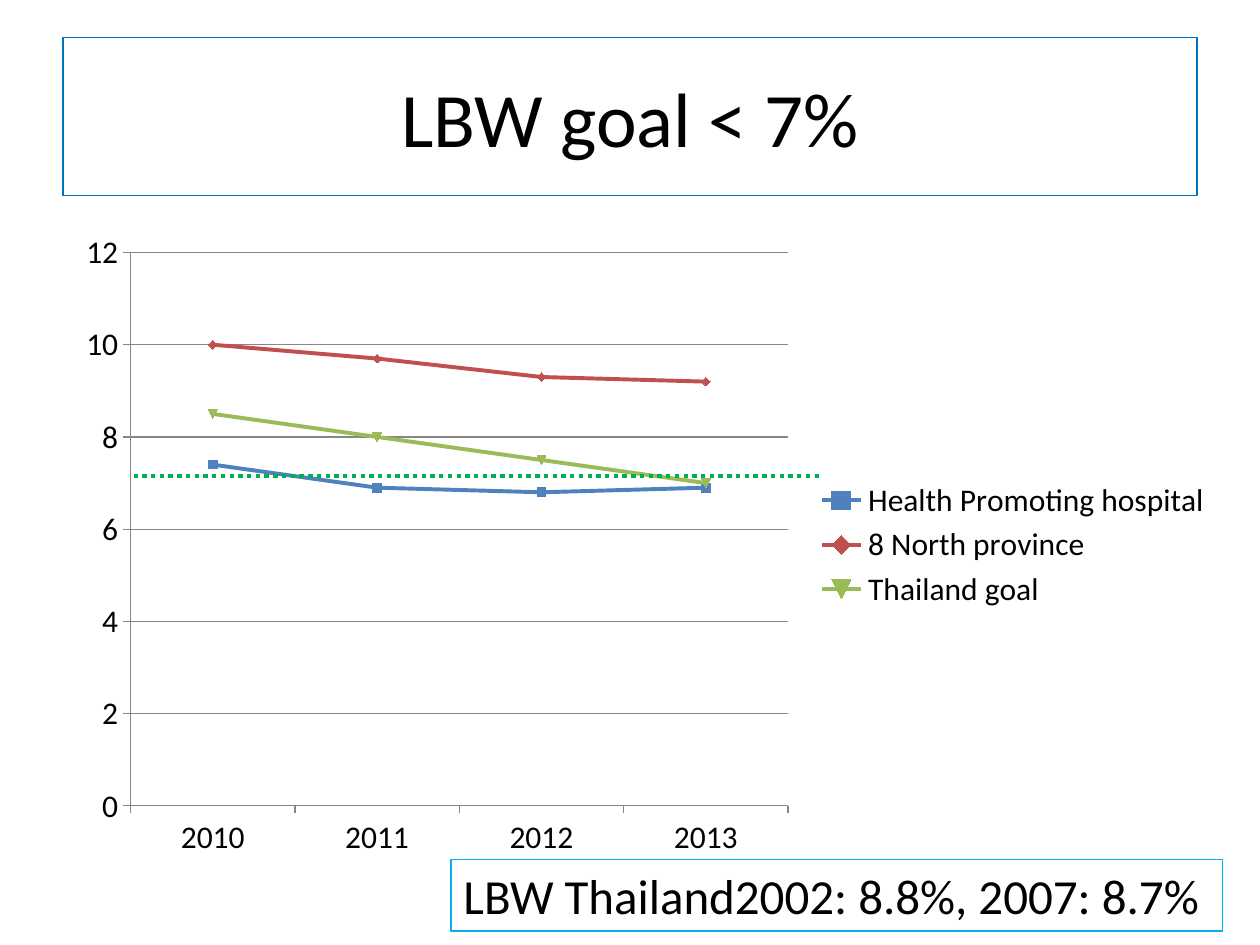
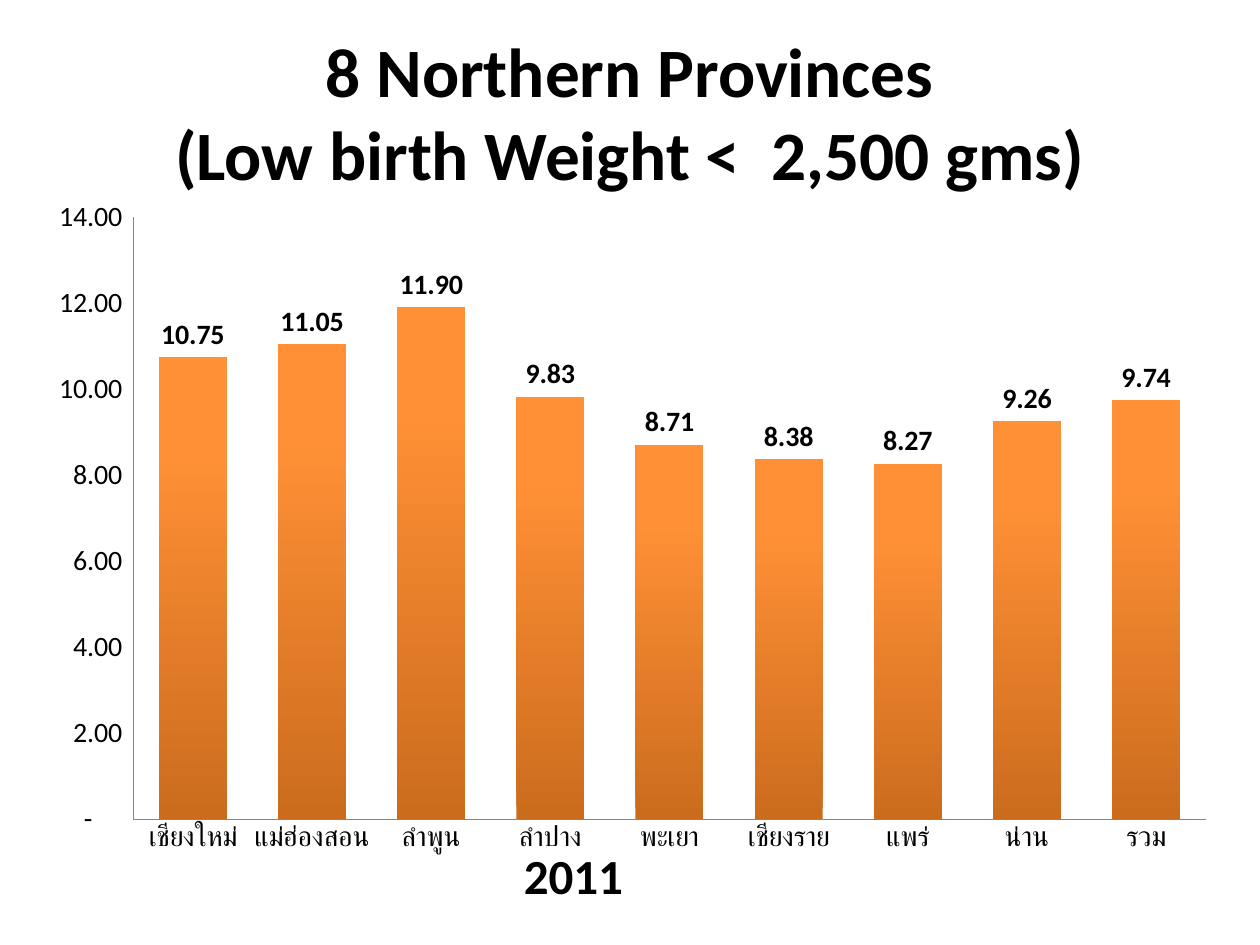
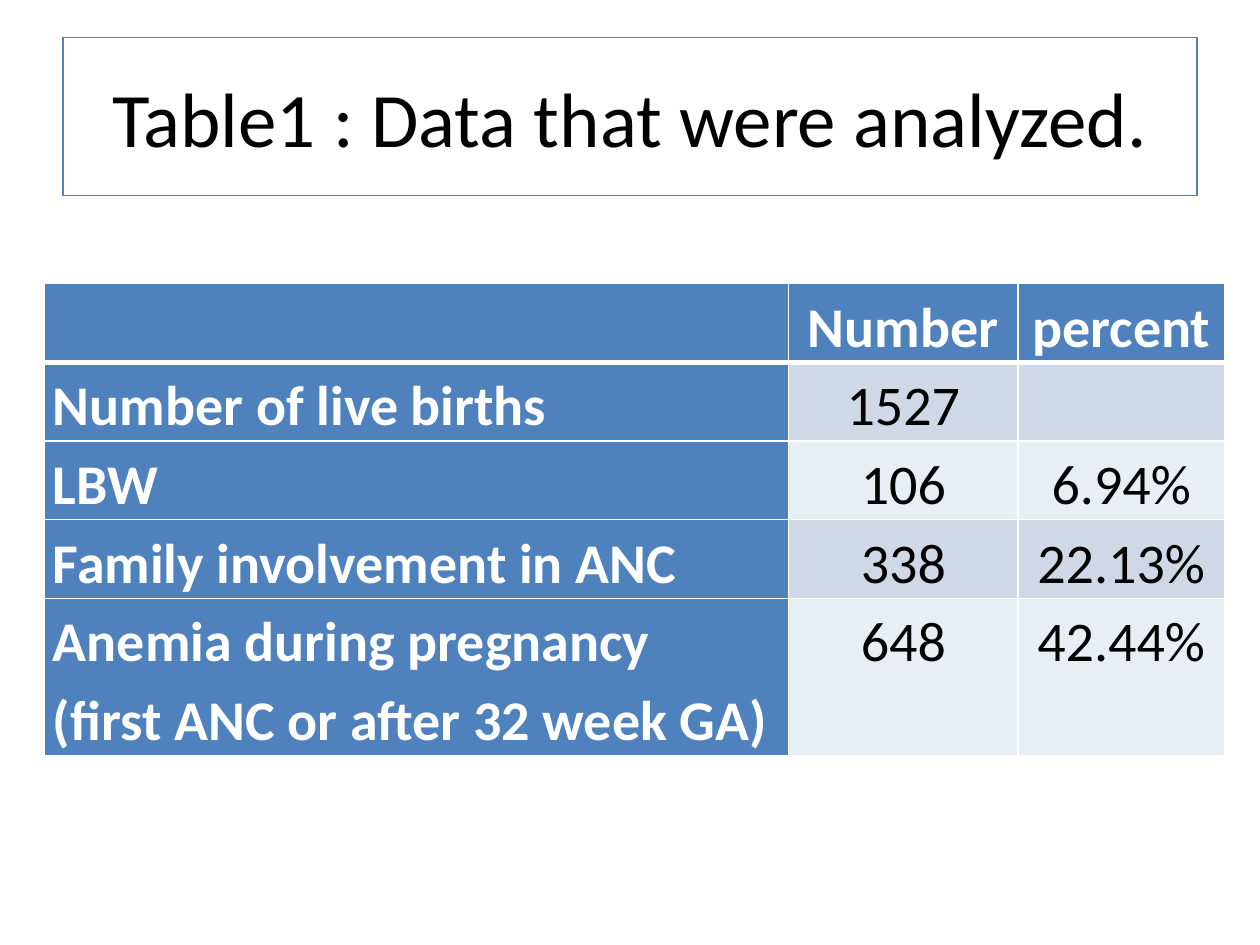
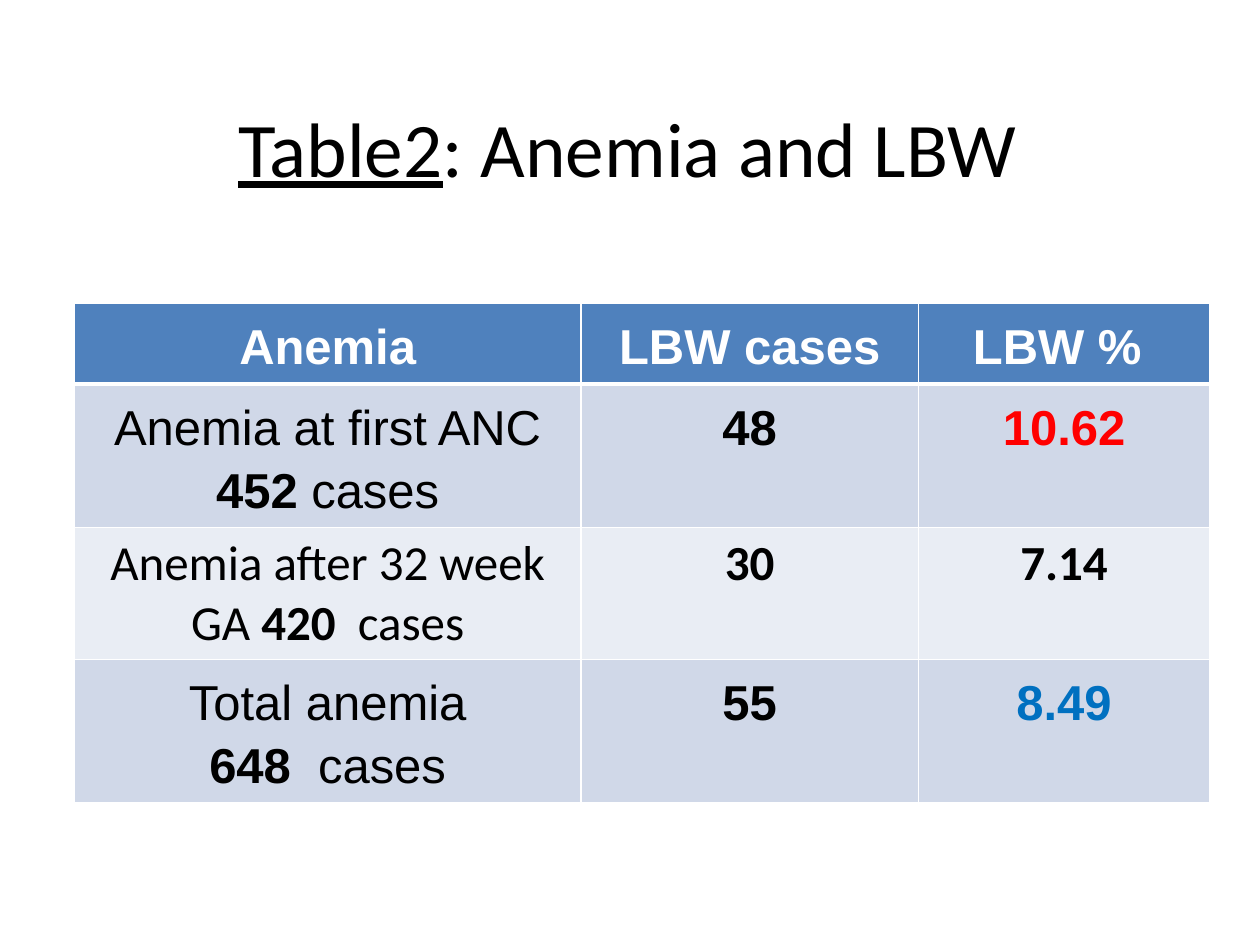
"""Build four slides on low birth weight: two charts and two tables."""
from dataclasses import dataclass
from typing import Optional

from lxml.etree import SubElement
from pptx import Presentation
from pptx.chart.data import CategoryChartData
from pptx.dml.color import RGBColor
from pptx.enum.chart import XL_CHART_TYPE as ChartType
from pptx.enum.chart import XL_LABEL_POSITION as LabelPosition
from pptx.enum.chart import XL_LEGEND_POSITION as LegendPosition
from pptx.enum.chart import XL_TICK_MARK as TickMark
from pptx.enum.dml import MSO_LINE as Dash
from pptx.enum.shapes import MSO_CONNECTOR as ConnectorType
from pptx.enum.text import MSO_ANCHOR as Anchor
from pptx.enum.text import MSO_AUTO_SIZE as AutoSize
from pptx.enum.text import PP_ALIGN as Align
from pptx.oxml.ns import qn
from pptx.util import Inches, Pt

BLACK, WHITE, GREY = "000000", "FFFFFF", "868686"
BLUE, RED, GREEN = "4F81BD", "C0504D", "9BBB59"
STRONG_BLUE, BRIGHT_BLUE, GOAL_GREEN, ALERT_RED = "0070C0", "00B0F0", "00B050", "FF0000"
BAR_DARK, BAR_LIGHT = "CB6C1D", "FF9036"
BANDS = ("D0D8E8", "E9EDF4")
BODY_FONT, TABLE_FONT = "Calibri", "Arial"
DECIMALS = '_(* #,##0.00_);_(* \\(#,##0.00\\);_(* "-"??_);_(@_)'


@dataclass(frozen=True)
class Box:
    """A frame in inches."""
    left: float
    top: float
    width: float
    height: float

    def lengths(self) -> tuple:
        """Return the frame as slide lengths."""
        return tuple(Inches(n) for n in (self.left, self.top, self.width, self.height))


@dataclass(frozen=True)
class Run:
    """A piece of text with one weight and underline."""
    text: str
    bold: bool = False
    underline: bool = False


@dataclass(frozen=True)
class TextStyle:
    """Font and paragraph settings."""
    size: float
    color: str = BLACK
    font: str = BODY_FONT
    align: Align = Align.CENTER
    spacing: Optional[float] = None


@dataclass(frozen=True)
class Cell:
    """Paragraphs of a table cell, and the colour of their text."""
    paragraphs: tuple = ()
    color: str = BLACK
    align: Align = Align.CENTER


@dataclass(frozen=True)
class Row:
    """A table row with its height, font, spacing and margins."""
    height: float
    cells: tuple
    font: str = BODY_FONT
    spacing: Optional[float] = 1.15
    margin_x: float = 0.07
    margin_y: float = 0.07


TITLE_BOX = Box(0.5, 0.3, 9, 1.25)


def rgb(color: str) -> RGBColor:
    """Turn a hex string into a colour."""
    return RGBColor.from_string(color)


def set_line(line, color: str, width: float) -> None:
    """Colour a line and set its width in points."""
    line.color.rgb = rgb(color)
    line.width = Pt(width)


def set_font(font, size: float, color: str = BLACK, name: str = BODY_FONT) -> None:
    """Set the size, colour and typeface of a font."""
    font.size, font.name = Pt(size), name
    font.color.rgb = rgb(color)


def write_paragraph(paragraph, runs: tuple, style: TextStyle) -> None:
    """Fill a paragraph with runs in one style."""
    paragraph.alignment = style.align
    if style.spacing:
        paragraph.line_spacing = style.spacing
    for part in runs:
        run = paragraph.add_run()
        run.text = part.text
        run.font.bold, run.font.underline = part.bold, part.underline
    for holder in (paragraph, *paragraph.runs):
        set_font(holder.font, style.size, style.color, style.font)


def add_slide(presentation, box: Box, lines: tuple, size: float = 44, outline: str = ""):
    """Add a slide with its title formatted and return it."""
    slide = presentation.slides.add_slide(presentation.slide_layouts[5])
    title = slide.shapes.title
    title.left, title.top, title.width, title.height = box.lengths()
    frame = title.text_frame
    frame.auto_size, frame.vertical_anchor = AutoSize.NONE, Anchor.MIDDLE
    paragraph = frame.paragraphs[0]
    for index, runs in enumerate(lines):
        if index:
            paragraph.add_line_break()
        write_paragraph(paragraph, runs, TextStyle(size))
    if outline:
        set_line(title.line, outline, 0.75)
    return slide


def add_note(slide, box: Box, run: Run, outline: str = "") -> None:
    """Add a one-line text box that fits its text."""
    note = slide.shapes.add_textbox(*box.lengths())
    note.text_frame.word_wrap = False
    note.text_frame.auto_size = AutoSize.SHAPE_TO_FIT_TEXT
    write_paragraph(note.text_frame.paragraphs[0], (run,), TextStyle(28, align=Align.LEFT))
    if outline:
        set_line(note.line, outline, 0.75)


def add_chart(slide, kind: ChartType, box: Box, categories: tuple, series: dict,
              size: float, maximum: float, tick: TickMark, gridlines: bool):
    """Add a chart with styled axes and return it."""
    data = CategoryChartData()
    data.categories = categories
    for name, values in series.items():
        data.add_series(name, values)
    chart = slide.shapes.add_chart(kind, *box.lengths(), data).chart
    chart.has_title = chart.has_legend = False
    set_font(chart.font, size)
    for axis in (chart.category_axis, chart.value_axis):
        axis.major_tick_mark, axis.minor_tick_mark = tick, TickMark.NONE
        set_line(axis.format.line, GREY, 0.75)
    value_axis = chart.value_axis
    value_axis.minimum_scale, value_axis.maximum_scale, value_axis.major_unit = 0, maximum, 2
    value_axis.has_major_gridlines = gridlines
    if gridlines:
        set_line(value_axis.major_gridlines.format.line, GREY, 0.75)
    chart.plots[0].vary_by_categories = False
    return chart


def add_goal_line(slide, left: float, right: float, top: float) -> None:
    """Draw the dotted goal line across a chart."""
    line = slide.shapes.add_connector(
        ConnectorType.STRAIGHT, Inches(left), Inches(top), Inches(right), Inches(top))
    set_line(line.line, GOAL_GREEN, 2.5)
    line.line.dash_style = Dash.ROUND_DOT
    SubElement(line._element.spPr, qn("a:effectLst"))


def set_borders(cell, top: float, bottom: float) -> None:
    """Give a cell white borders with the top and bottom widths in points."""
    properties = cell._tc.get_or_add_tcPr()
    for side, width in (("L", 1), ("R", 1), ("T", top), ("B", bottom)):
        border = SubElement(properties, qn(f"a:ln{side}"), w=str(Pt(width)))
        fill = SubElement(border, qn("a:solidFill"))
        SubElement(fill, qn("a:srgbClr"), val=WHITE)


def fill_cell(cell, content: Cell, row: Row, size: float, fill: str) -> None:
    """Write, colour and space one table cell."""
    cell.margin_left = cell.margin_right = Inches(row.margin_x)
    cell.margin_top = cell.margin_bottom = Inches(row.margin_y)
    cell.fill.solid()
    cell.fill.fore_color.rgb = rgb(fill)
    style = TextStyle(size, content.color, row.font, content.align, row.spacing)
    frame = cell.text_frame
    for index, runs in enumerate(content.paragraphs):
        paragraph = frame.add_paragraph() if index else frame.paragraphs[0]
        write_paragraph(paragraph, runs, style)


def add_table(slide, box: Box, widths: tuple, rows: tuple, size: float,
              header_column: bool = False) -> None:
    """Add a banded table whose first row is a header."""
    table = slide.shapes.add_table(len(rows), len(widths), *box.lengths()).table
    for column, width in zip(table.columns, widths):
        column.width = Inches(width)
    for row_index, row in enumerate(rows):
        table.rows[row_index].height = Inches(row.height)
        for column_index, content in enumerate(row.cells):
            is_header = row_index == 0 or (header_column and column_index == 0)
            fill = BLUE if is_header else BANDS[(row_index - 1) % 2]
            cell = table.cell(row_index, column_index)
            set_borders(cell, 3 if row_index == 1 else 1, 3 if row_index == 0 else 1)
            fill_cell(cell, content, row, size, fill)


def heading(*lines: str, align: Align = Align.CENTER) -> Cell:
    """Make a bold white cell."""
    return Cell(tuple((Run(line, True),) for line in lines), WHITE, align)


def value(text: str, bold: bool = False, color: str = BLACK) -> Cell:
    """Make a centred cell with one value."""
    return Cell(((Run(text, bold),),) if text else (), color)


def build_goal_slide(presentation) -> None:
    """Compare the yearly LBW rates with the goal."""
    slide = add_slide(presentation, TITLE_BOX, ((Run("LBW goal < 7%"),),), outline=STRONG_BLUE)
    rates = {
        "Health Promoting hospital": (7.4, 6.9, 6.8, 6.9),
        "8 North province": (10, 9.7, 9.3, 9.2),
        "Thailand goal": (8.5, 8, 7.5, 7),
    }
    chart = add_chart(slide, ChartType.LINE_MARKERS, Box(0.5, 1.75, 9.22, 5.15),
                      ("2010", "2011", "2012", "2013"), rates, 18, 12, TickMark.OUTSIDE, True)
    chart.has_legend = True
    chart.legend.position = LegendPosition.RIGHT
    chart.legend.include_in_layout = False
    for series, color in zip(chart.plots[0].series, (BLUE, RED, GREEN)):
        series.smooth = False
        set_line(series.format.line, color, 2.25)
    add_goal_line(slide, 1.06, 6.5, 3.78)
    add_note(slide, Box(3.58, 6.82, 6.12, 0.57), Run("LBW Thailand2002: 8.8%, 2007: 8.7%"),
             BRIGHT_BLUE)


def build_province_slide(presentation) -> None:
    """Show the LBW rate of each province."""
    lines = ((Run("8 Northern Provinces", True),),
             (Run("(Low birth Weight <  2,500 gms)", True),))
    slide = add_slide(presentation, Box(0.5, 0.21, 9, 1.34), lines, 39.6)
    provinces = ("เชียงใหม่", "แม่ฮ่องสอน", "ลำพูน", "ลำปาง", "พะเยา",
                 "เชียงราย", "แพร่", "น่าน", "รวม")
    rates = {"Series 1": (10.75, 11.05, 11.9, 9.83, 8.71, 8.38, 8.27, 9.26, 9.74)}
    chart = add_chart(slide, ChartType.COLUMN_CLUSTERED, Box(0.23, 1.48, 9.53, 5.39),
                      provinces, rates, 16, 14, TickMark.NONE, False)
    tick_labels = chart.value_axis.tick_labels
    tick_labels.number_format, tick_labels.number_format_is_linked = DECIMALS, False
    plot = chart.plots[0]
    plot.gap_width = 75
    plot.has_data_labels = True
    labels = plot.data_labels
    labels.show_value, labels.position = True, LabelPosition.OUTSIDE_END
    labels.number_format, labels.number_format_is_linked = DECIMALS, False
    set_font(labels.font, 16)
    labels.font.bold = True
    bars = plot.series[0].format
    bars.fill.gradient()
    bars.fill.gradient_angle = 90
    for stop, color, position in zip(bars.fill.gradient_stops, (BAR_DARK, BAR_LIGHT), (0, 0.8)):
        stop.color.rgb, stop.position = rgb(color), position
    bars.line.fill.background()
    add_note(slide, Box(4.06, 6.66, 1, 0.57), Run("2011", True))


def build_data_slide(presentation) -> None:
    """Tabulate the analyzed data."""
    slide = add_slide(presentation, TITLE_BOX, ((Run("Table1 : Data that were analyzed."),),),
                      outline=BLUE)
    records = (
        (("Number of live births",), "1527", ""),
        (("LBW",), "106", "6.94%"),
        (("Family involvement in ANC",), "338", "22.13%"),
        (("Anemia during pregnancy", "(first ANC or after 32 week GA)"), "648", "42.44%"),
    )
    header = Row(0.61, (Cell(), heading("Number"), heading("percent")), margin_y=0)
    rows = tuple(
        Row(0.62 * len(lines), (heading(*lines, align=Align.LEFT), value(number), value(percent)),
            margin_y=0)
        for lines, number, percent in records)
    add_table(slide, Box(0.35, 2.25, 9.37, 3.68), (5.91, 1.82, 1.64), (header, *rows), 32, True)


def build_anemia_slide(presentation) -> None:
    """Tabulate LBW among anemia cases."""
    lines = ((Run("Table2", underline=True), Run(": Anemia and LBW")),)
    slide = add_slide(presentation, Box(0.12, 0.3, 9.72, 1.72), lines, 44.1)
    first = Cell(((Run("Anemia at first ANC "), Run("452 ", True), Run("cases")),))
    later = Cell(((Run("Anemia after 32 week GA "), Run("420", True), Run("  cases")),))
    total = Cell(((Run("Total anemia"),), (Run("648  ", True), Run("cases"))))
    rows = (
        Row(0.63, tuple(heading(text) for text in ("Anemia", "LBW cases", "LBW % ")), TABLE_FONT),
        Row(1.13, (first, value("48", True), value("10.62", True, ALERT_RED)), TABLE_FONT),
        Row(1.05, (later, value("30", True), value("7.14", True)),
            spacing=None, margin_x=0.1, margin_y=0.05),
        Row(1.13, (total, value("55", True), value("8.49", True, STRONG_BLUE)), TABLE_FONT),
    )
    add_table(slide, Box(0.59, 2.41, 9, 4), (4.02, 2.68, 2.31), rows, 28)


def main() -> None:
    """Build and save the presentation."""
    presentation = Presentation()
    presentation.slide_width, presentation.slide_height = Inches(10), Inches(7.5)
    build_goal_slide(presentation)
    build_province_slide(presentation)
    build_data_slide(presentation)
    build_anemia_slide(presentation)
    presentation.save("out.pptx")


if __name__ == "__main__":
    main()
